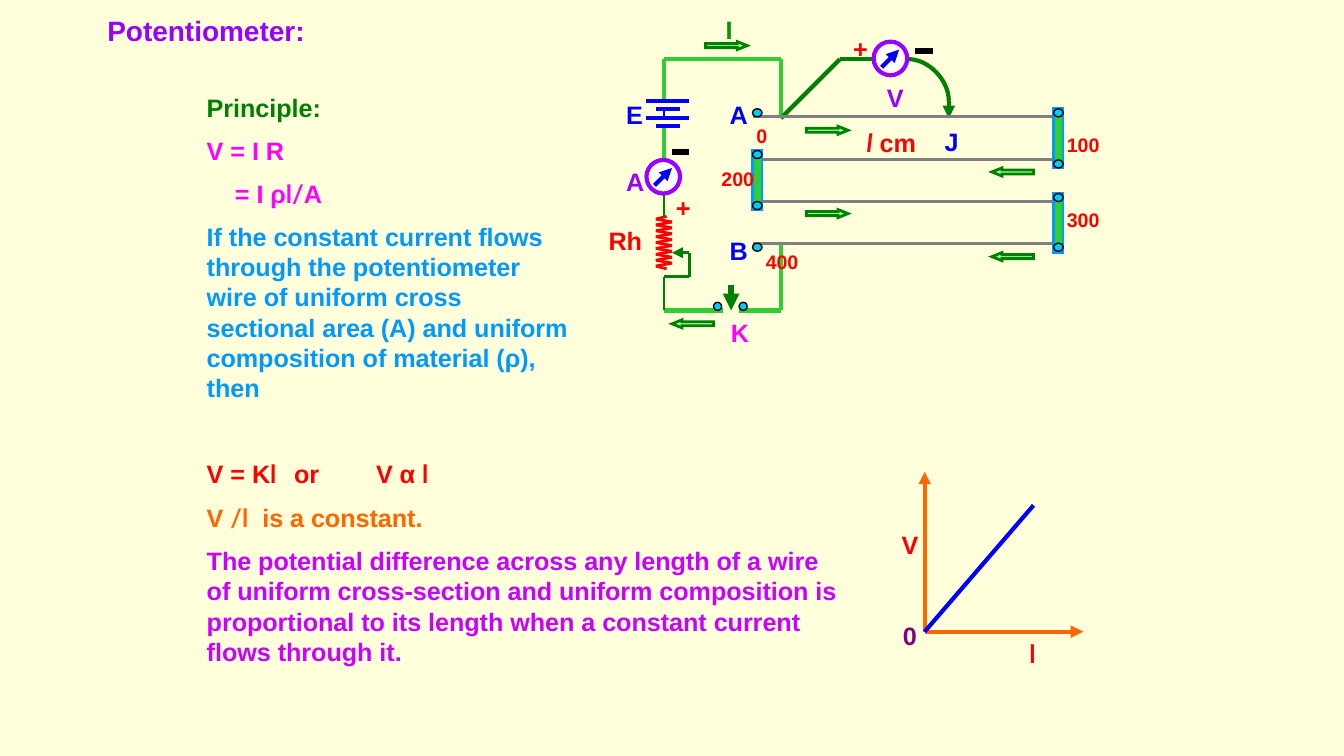
"""Build the potentiometer principle slide with its circuit and graph."""
import itertools

import lxml.etree
import pptx
import pptx.dml.color
import pptx.enum.shapes
import pptx.oxml.ns
import pptx.util

Inches = pptx.util.Inches
Pt = pptx.util.Pt
RGBColor = pptx.dml.color.RGBColor
KIND = pptx.enum.shapes.MSO_SHAPE
CONNECTOR = pptx.enum.shapes.MSO_CONNECTOR
qn = pptx.oxml.ns.qn

CREAM = RGBColor(0xFF, 0xFF, 0xDB)
WHITE = RGBColor(0xFF, 0xFF, 0xFF)
BLACK = RGBColor(0x00, 0x00, 0x00)
VIOLET = RGBColor(0x99, 0x00, 0xFF)
PURPLE = RGBColor(0x80, 0x00, 0x80)
ORCHID = RGBColor(0xCC, 0x00, 0xFF)
MAGENTA = RGBColor(0xFF, 0x00, 0xFF)
RED = RGBColor(0xFF, 0x00, 0x00)
ORANGE = RGBColor(0xFF, 0x66, 0x00)
BLUE = RGBColor(0x00, 0x00, 0xFF)
SKY = RGBColor(0x00, 0x99, 0xFF)
CYAN = RGBColor(0x00, 0xCC, 0xFF)
GREEN = RGBColor(0x00, 0x80, 0x00)
LEAF = RGBColor(0x00, 0x99, 0x00)
LIME = RGBColor(0x33, 0xCC, 0x33)
MINT = RGBColor(0x99, 0xFF, 0x99)
GRAY = RGBColor(0x80, 0x80, 0x80)

deck = pptx.Presentation()
deck.slide_width, deck.slide_height = Inches(10), Inches(10) * 9 // 16
page = deck.slides.add_slide(deck.slide_layouts[6])
page.background.fill.solid()
page.background.fill.fore_color.rgb = CREAM


def draw_line(start, end, color, weight, arrow=False, kind=CONNECTOR.STRAIGHT):
    ends = [Inches(value) for value in (*start, *end)]
    wire = page.shapes.add_connector(kind, *ends)
    wire.line.color.rgb = color
    wire.line.width = Pt(weight)
    if arrow:
        lxml.etree.SubElement(wire.line._get_or_add_ln(), qn("a:tailEnd"), type="triangle")
    properties = wire._element.spPr
    lxml.etree.SubElement(properties, qn("a:effectLst"))
    return properties


def write(place, paragraphs, size=13.5):
    box = page.shapes.add_textbox(*[Inches(value) for value in place])
    box.text_frame.word_wrap = True
    for index, (color, runs) in enumerate(paragraphs):
        para = box.text_frame.paragraphs[0] if index == 0 else box.text_frame.add_paragraph()
        para.line_spacing = Pt(size * 1.2)
        if index:
            para.space_before = Pt(size / 2)
        for text, font_name, italic in runs:
            span = para.add_run()
            span.text = text
            span.font.color.rgb = color
            formats = {"name": font_name, "size": Pt(size), "bold": True, "italic": italic}
            for name, value in formats.items():
                setattr(span.font, name, value)
    return box.text_frame.paragraphs


write((0.7, 0.05, 2.89, 0.35), [(VIOLET, [("Potentiometer:", "Arial", False)])], 15)

principle = write((1.44, 0.64, 2.94, 3.17), [
    (GREEN, [("Principle:", "Arial", False)]),
    (MAGENTA, [("V = I R", "Arial", False)]),
    (MAGENTA, [("= I ρ", "Arial", False), ("l/", "Lato", False), ("A", "Arial", False)]),
    (SKY, [("If the constant current flows through the potentiometer wire of uniform "
            "cross sectional area (A) and uniform composition of material (ρ), then",
            "Arial", False)]),
    (RED, [("V = K", "Arial", False), ("l\t", "Lato", False),
           ("or\tV α ", "Arial", False), ("l", "Lato", False)]),
])
principle[2]._p.get_or_add_pPr().set("marL", str(Inches(0.21)))
principle[4].space_before = Pt(29.7)
stops = lxml.etree.SubElement(principle[4]._p.get_or_add_pPr(), qn("a:tabLst"))
for stop in (0.65, 1.26):
    lxml.etree.SubElement(stops, qn("a:tab"), pos=str(Inches(stop)), algn="l")

write((1.44, 3.69, 4.94, 1.35), [
    (ORANGE, [("V ", "Arial", False), ("/l", "Lato", False),
              ("  is a constant.", "Arial", False)]),
    (ORCHID, [("The potential difference across any length of a wire of uniform "
               "cross-section and uniform composition is proportional to its length "
               "when a constant current flows through it.", "Arial", False)]),
])

coil = [(4.88 if row % 2 == 0 else 5, 1.63 + row * 0.35 / 16) for row in range(17)]
routes = [
    (LIME, 2.25, False, [(5.81, 0.88), (5.81, 0.44), (4.94, 0.44), (4.94, 0.75)]),
    (LIME, 2.25, False, [(4.94, 1.19), (4.94, 0.94)]),
    (LIME, 2.25, False, [(5.38, 2.31), (4.94, 2.31)]),
    (LIME, 2.25, False, [(5.5, 2.31), (5.81, 2.31), (5.81, 1.81)]),
    (GREEN, 3, True, [(5.44, 2.12), (5.44, 2.31)]),
    (GREEN, 2.25, False, [(5.81, 0.88), (6.25, 0.44), (6.5, 0.44)]),
    (GREEN, 2.25, True, [(7.06, 0.75), (7.06, 0.88)]),
    (GREEN, 1.5, False, [(4.94, 2.31), (4.94, 2.06), (5.13, 2.06), (5.13, 1.88)]),
    (GREEN, 1.5, True, [(5.13, 1.88), (5, 1.88)]),
    (RED, 1.5, False, [(4.96, 1.61), *coil, (4.96, 2)]),
    (GREEN, 1.5, False, [(4.94, 1.44), (4.94, 1.62)]),
    (BLUE, 1.5, False, [(4.94, 0.81), (4.94, 0.88)]),
    (BLACK, 3, False, [(6.81, 0.38), (6.94, 0.38)]),
    (BLACK, 3, False, [(5, 1.13), (5.13, 1.13)]),
    (ORANGE, 2.25, True, [(6.88, 4.7), (6.88, 3.51)]),
    (ORANGE, 2.25, True, [(6.88, 4.7), (8.06, 4.7)]),
    (BLUE, 2.25, False, [(6.88, 4.7), (7.69, 3.76)]),
]
for y, left, right in ((0.75, 4.81, 5.13), (0.81, 4.88, 5.06),
                       (0.88, 4.81, 5.13), (0.94, 4.88, 5.06)):
    routes.append((BLUE, 2.25, False, [(left, y), (right, y)]))
for y in (0.87, 1.19, 1.5, 1.81):
    routes.append((GRAY, 1.5, False, [(5.6, y), (7.9, y)]))
for color, weight, arrow, points in routes:
    for start, end in itertools.pairwise(points):
        draw_line(start, end, color, weight, arrow)

curve = draw_line((6.76, 0.44), (7.06, 0.75), GREEN, 2.25, kind=CONNECTOR.CURVE)
curve.find(qn("a:prstGeom")).set("prst", "curvedConnector2")

meters = [(6.5, 0.31), (4.81, 1.19)]
outlines = [(KIND.OVAL, x, y, 0.25, 0.25, WHITE, VIOLET, 2.25) for x, y in meters]
for x, y in ((6, 0.94), (6, 1.56), (5.25, 0.31)):
    outlines.append((KIND.RIGHT_ARROW, x, y, 0.31, 0.06, MINT, GREEN, 1.5))
for x, y in ((7.38, 1.25), (7.38, 1.88), (5, 2.38)):
    outlines.append((KIND.LEFT_ARROW, x, y, 0.31, 0.06, MINT, GREEN, 1.5))
for x, y in ((7.84, 0.81), (7.84, 1.44), (5.6, 1.12)):
    outlines.append((KIND.RECTANGLE, x, y, 0.07, 0.44, LIME, SKY, 1.5))
for x, rows in ((5.6, (0.81, 1.12, 1.5, 1.81)), (7.84, (0.81, 1.19, 1.44, 1.81))):
    for y in rows:
        outlines.append((KIND.OVAL, x, y, 0.07, 0.06, CYAN, BLACK, 0.75))
for x in (5.31, 5.5):
    outlines.append((KIND.OVAL, x, 2.25, 0.06, 0.06, CYAN, BLACK, 0.75))
for kind, x, y, width, height, fill, edge, weight in outlines:
    shape = page.shapes.add_shape(kind, Inches(x), Inches(y), Inches(width), Inches(height))
    shape.shadow.inherit = False
    shape.fill.solid()
    shape.fill.fore_color.rgb = fill
    shape.line.color.rgb = edge
    shape.line.width = Pt(weight)
    lxml.etree.SubElement(shape.line._get_or_add_ln(), qn("a:miter"), lim="800000")
    if kind in (KIND.LEFT_ARROW, KIND.RIGHT_ARROW):
        shape.adjustments[0], shape.adjustments[1] = 0.5, 1.25

for x, y in meters:
    draw_line((x + 0.06, y + 0.19), (x + 0.19, y + 0.06), BLUE, 2.25, True)

labels = [
    ("J", 6.93, 0.89, 0.31, BLUE), ("V", 6.5, 0.56, 0.33, VIOLET),
    ("+", 6.25, 0.2, 0.25, RED), ("K", 5.34, 2.31, 0.34, MAGENTA),
    ("E", 4.56, 0.69, 0.33, BLUE), ("A", 4.56, 1.19, 0.31, VIOLET),
    ("Rh", 4.43, 1.63, 0.51, RED), ("+", 4.93, 1.38, 0.31, RED),
    ("I", 5.3, 0.06, 0.25, LEAF), ("A", 5.33, 0.69, 0.36, BLUE),
    ("B", 5.33, 1.7, 0.36, BLUE), ("0", 6.62, 4.57, 0.25, PURPLE),
    ("V", 6.61, 3.89, 0.33, RED),
]
for text, x, y, width, color in labels:
    write((x, y, width, 0.33), [(color, [(text, "Arial", False)])])
write((7.56, 4.7, 0.38, 0.33), [(RED, [("l", "Lato", False)])])
write((6.35, 0.9, 0.58, 0.33), [(RED, [("l", "Lato", True), (" cm", "Arial", False)])])

for text, x, y, width in (("0", 5.53, 0.87, 0.2), ("100", 7.84, 0.94, 0.58),
                          ("200", 5.27, 1.19, 0.46), ("300", 7.84, 1.5, 0.73),
                          ("400", 5.6, 1.81, 0.46)):
    write((x, y, width, 0.28), [(RED, [(text, "Arial", False)])], 10.5)

deck.save("out.pptx")
